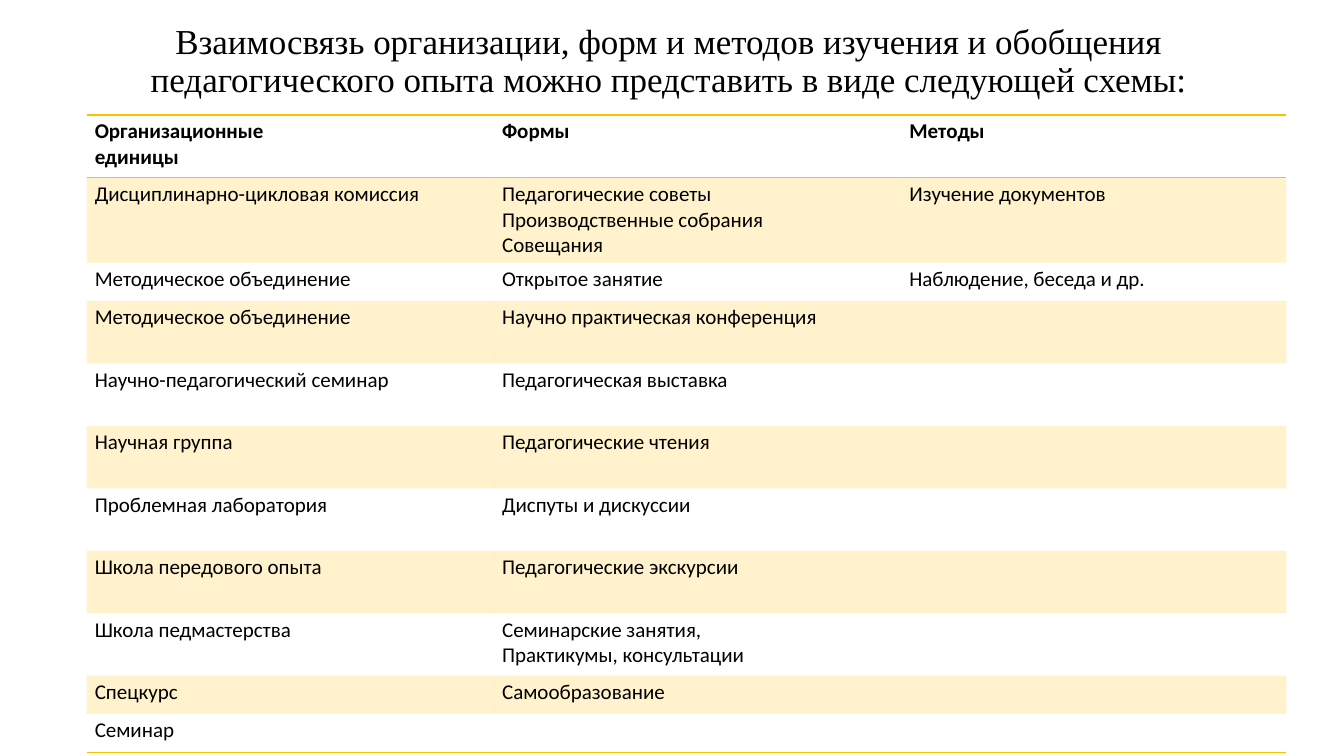
from lxml.etree import SubElement as Sub
from pptx import Presentation
from pptx.dml.color import RGBColor as Rgb
from pptx.enum.text import MSO_ANCHOR as Anchor, PP_ALIGN as Align
from pptx.oxml.ns import qn
from pptx.util import Inches, Pt

HUES = {"text": "000000", "gold": "FFC000"}
PLAIN = "{2D5ABB26-0587-4C30-8999-92F81FD0307C}"
TITLE = ("Взаимосвязь организации, форм и методов изучения и обобщения "
         "педагогического опыта можно представить в виде следующей схемы:")
ROWS = [
    (0.62, "Организационные\vединицы", "Формы", "Методы"),
    (0.62, "Дисциплинарно-цикловая комиссия",
     "Педагогические советы\vПроизводственные собрания\nСовещания", "Изучение документов"),
    (0.38, "Методическое объединение", "Открытое занятие", "Наблюдение, беседа и др."),
    (0.62, "Методическое объединение", "Научно практическая конференция", ""),
    (0.62, "Научно-педагогический семинар", "Педагогическая выставка", ""),
    (0.62, "Научная группа", "Педагогические чтения", ""),
    (0.62, "Проблемная лаборатория", "Диспуты и дискуссии", ""),
    (0.62, "Школа передового опыта", "Педагогические экскурсии", ""),
    (0.62, "Школа педмастерства", "Семинарские занятия,\vПрактикумы, консультации", ""),
    (0.38, "Спецкурс", "Самообразование", ""),
    (0.38, "Семинар", "", ""),
]


def apply(item, form):
    for name, value in form.items():
        setattr(item, name, value)


class Deck:
    def __init__(self):
        self.prs = Presentation()
        apply(self.prs, {"slide_width": Inches(13.33), "slide_height": Inches(7.5)})
        self.slide = self.prs.slides.add_slide(self.prs.slide_layouts[5])

    def style(self, para, face, size, bold=False):
        for run in para.runs:
            apply(run.font, {"name": face, "size": Pt(size), "bold": bold})
            run.font.color.rgb = Rgb.from_string(HUES["text"])
        for mark in para._p.findall(qn("a:br")):
            Sub(mark, qn("a:rPr")).set("sz", str(size * 100))
        if not para.runs:
            Sub(para._p, qn("a:endParaRPr")).set("sz", str(size * 100))

    def title(self, text, left, top, width, height):
        box = self.slide.shapes.title
        apply(box, {"left": Inches(left), "top": Inches(top),
                    "width": Inches(width), "height": Inches(height)})
        frame = box.text_frame
        apply(frame, {"text": text, "word_wrap": True, "vertical_anchor": Anchor.MIDDLE})
        para = frame.paragraphs[0]
        apply(para, {"alignment": Align.CENTER, "line_spacing": 0.9})
        self.style(para, "Times New Roman", 25)

    def edge(self, cell, sides):
        props = cell._tc.get_or_add_tcPr()
        for spot, side in enumerate(sides):
            line = Sub(props, qn("a:ln" + side), w=str(Pt(1)))
            Sub(Sub(line, qn("a:solidFill")), qn("a:srgbClr"), val=HUES["gold"])
            props.insert(spot, line)

    def tint(self, cell):
        cell.fill.solid()
        cell.fill.fore_color.rgb = Rgb.from_string(HUES["gold"])
        color = cell._tc.tcPr.find(".//" + qn("a:srgbClr"))
        Sub(color, qn("a:alpha"), val="20000")

    def cell(self, cell, text, band, bold, sides):
        apply(cell, {"margin_left": Inches(0.08), "margin_right": Inches(0.08),
                     "margin_top": Inches(0.04), "margin_bottom": Inches(0.04)})
        cell.text_frame.text = text
        for para in cell.text_frame.paragraphs:
            self.style(para, "Calibri", 15, bold)
        if band:
            self.tint(cell)
        else:
            cell.fill.background()
        self.edge(cell, sides)

    def table(self, rows, cols, left, top):
        high = sum(row[0] for row in rows)
        frame = self.slide.shapes.add_table(
            len(rows), len(cols), Inches(left), Inches(top), Inches(sum(cols)), Inches(high))
        grid = frame.table
        grid._tbl.tblPr.find(qn("a:tableStyleId")).text = PLAIN
        for col, width in zip(grid.columns, cols):
            col.width = Inches(width)
        edges = {0: "TB", len(rows) - 1: "B"}
        for num, (height, *texts) in enumerate(rows):
            grid.rows[num].height = Inches(height)
            for col, text in enumerate(texts):
                self.cell(grid.cell(num, col), text, num % 2, num == 0, edges.get(num, ""))


def main():
    deck = Deck()
    deck.title(TITLE, 0.88, 0, 11.5, 1.24)
    deck.table(ROWS, (4.04, 4.04, 3.82), 0.86, 1.14)
    deck.prs.save("out.pptx")


if __name__ == "__main__":
    main()
